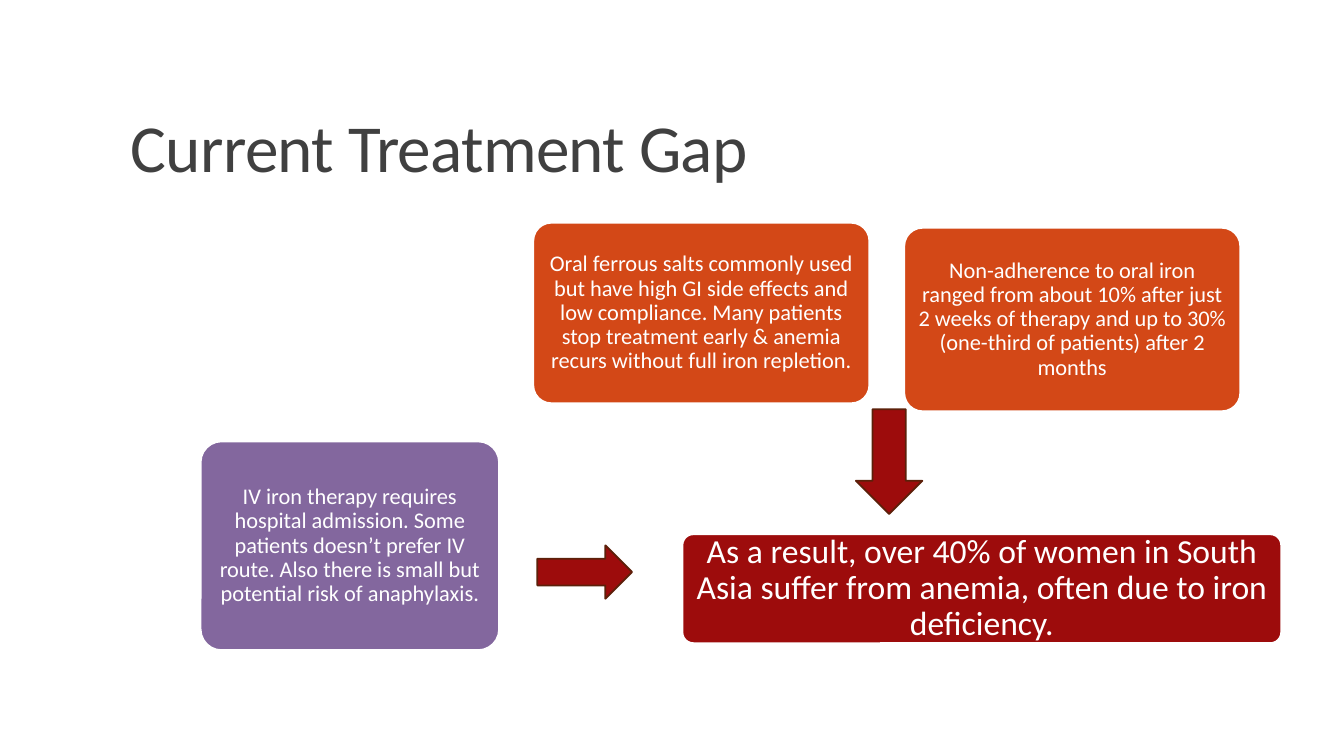
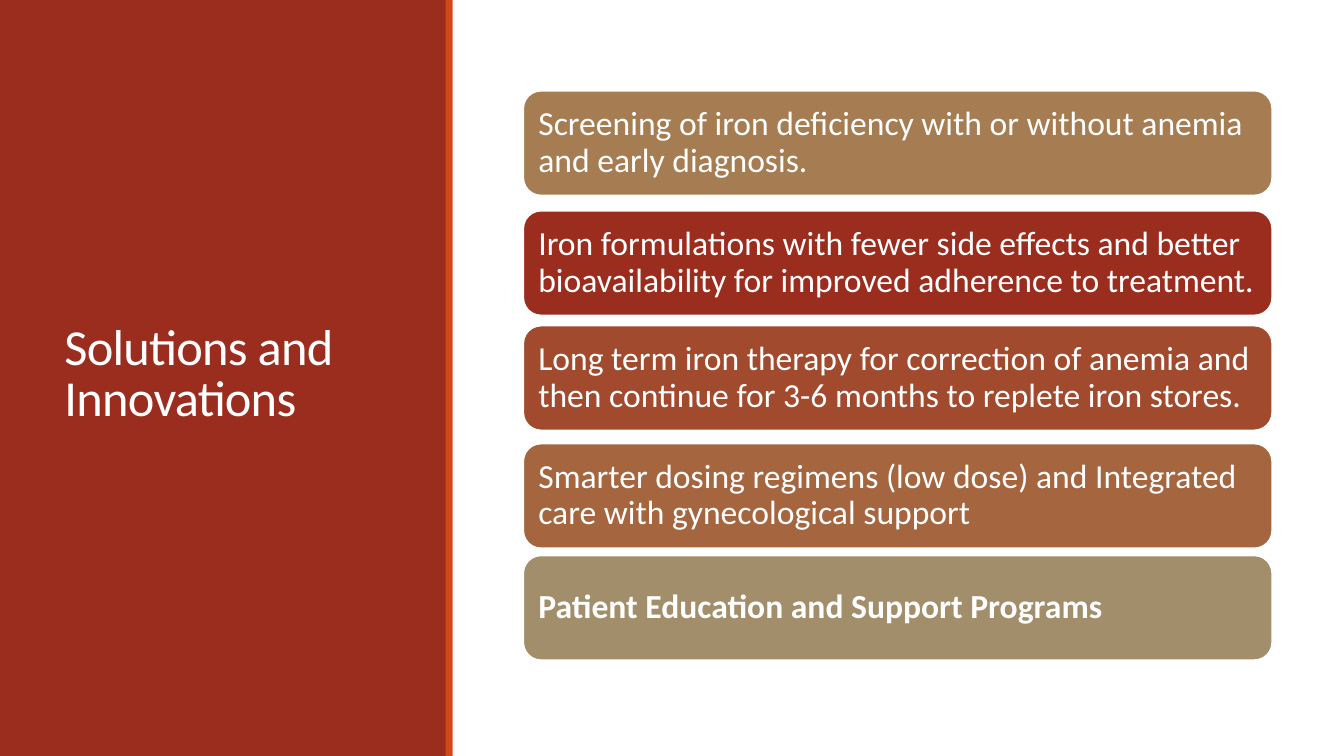
from pptx import Presentation
from pptx.dml.color import RGBColor
from pptx.enum.shapes import MSO_SHAPE as Shape
from pptx.enum.text import MSO_ANCHOR as Anchor, PP_ALIGN as Align
from pptx.util import Inches, Pt

# Colours
WHITE = RGBColor(0xFF, 0xFF, 0xFF)
CHARCOAL = RGBColor(0x40, 0x40, 0x40)
ORANGE = RGBColor(0xD3, 0x48, 0x17)
PURPLE = RGBColor(0x83, 0x67, 0x9E)
CRIMSON = RGBColor(0x9D, 0x0C, 0x0C)
DARK_BROWN = RGBColor(0x5C, 0x20, 0x0A)
BRICK = RGBColor(0x9B, 0x2D, 0x1F)
RUST = RGBColor(0xA1, 0x4A, 0x2E)
COPPER = RGBColor(0xA4, 0x65, 0x3F)
TAN = RGBColor(0xA6, 0x7D, 0x52)
KHAKI = RGBColor(0xA2, 0x8E, 0x6A)


def apply(target, values):
    for name, value in values.items():
        setattr(target, name, value)


class Deck:
    """Shared style and the current slide; areas are percentages of the slide."""
    FONT = "Calibri"
    LINE_WIDTH = Pt(1.25)

    def __init__(self):
        self.prs = Presentation()
        apply(self.prs, {"slide_width": Inches(13.33), "slide_height": Inches(7.5)})
        self.slide = None

    def new_slide(self):
        self.slide = self.prs.slides.add_slide(self.prs.slide_layouts[6])

    def place(self, area):
        left, top, width, height = area
        across, down = self.prs.slide_width / 100, self.prs.slide_height / 100
        return (round(left * across), round(top * down),
                round(width * across), round(height * down))

    def add_text(self, frame, text, size, color, anchor, align=Align.LEFT,
                 spacing=0.9, bold=False, inset=None):
        apply(frame, {"word_wrap": True, "vertical_anchor": anchor})
        if inset is not None:
            sides = ("left", "top", "right", "bottom")
            apply(frame, {f"margin_{side}": Inches(inset) for side in sides})
        paragraph = frame.paragraphs[0]
        apply(paragraph, {"alignment": align, "line_spacing": spacing})
        run = paragraph.add_run()
        run.text = text
        apply(run.font, {"name": self.FONT, "size": Pt(size), "bold": bold})
        run.font.color.rgb = color
        return run

    def title(self, text, area, size, color, anchor):
        box = self.slide.shapes.add_textbox(*self.place(area))
        run = self.add_text(box.text_frame, text, size, color, anchor, spacing=0.85)
        run._r.get_or_add_rPr().set("spc", "-50")

    def block(self, kind, area, fill, outline=None):
        shape = self.slide.shapes.add_shape(kind, *self.place(area))
        shape.shadow.inherit = False
        shape.fill.solid()
        shape.fill.fore_color.rgb = fill
        if outline is None:
            shape.line.fill.background()
        else:
            shape.line.color.rgb = outline
            shape.line.width = self.LINE_WIDTH
        return shape

    def card(self, text, area, fill, size, corner=0.1, inset=0.1, **style):
        shape = self.block(Shape.ROUNDED_RECTANGLE, area, fill, WHITE)
        shape.adjustments[0] = corner
        self.add_text(shape.text_frame, text, size, WHITE, Anchor.MIDDLE,
                      inset=inset, **style)

    def arrow(self, kind, area):
        self.block(kind, area, CRIMSON, DARK_BROWN)


def treatment_gap(deck):
    deck.new_slide()
    deck.title("Current Treatment Gap", (9, 4.13, 82.5, 21.2), 48, CHARCOAL,
               Anchor.BOTTOM)

    # Causes
    causes = [
        ("Oral ferrous salts commonly used but have high GI side effects and low "
         "compliance. Many patients stop treatment early & anemia recurs without "
         "full iron repletion.", (39.68, 29.47, 25, 23.87), ORANGE),
        ("IV iron therapy requires hospital admission. Some patients doesn’t prefer "
         "IV route. Also there is small but potential risk of anaphylaxis.",
         (14.93, 58.4, 22.2, 27.6), PURPLE),
        ("Non-adherence to oral iron ranged from about 10% after just 2 weeks of "
         "therapy and up to 30% (one-third of patients) after 2 months",
         (67.28, 30.13, 25, 24.27), ORANGE),
    ]
    for text, area, fill in causes:
        deck.card(text, area, fill, 16, inset=0.07, align=Align.CENTER)

    # Result
    deck.card("As a result, over 40% of women in South Asia suffer from anemia, "
              "often due to iron deficiency.", (50.78, 70.67, 44.55, 14.4),
              CRIMSON, 24, align=Align.CENTER)
    deck.arrow(Shape.DOWN_ARROW, (63.68, 54.13, 4.95, 13.87))
    deck.arrow(Shape.RIGHT_ARROW, (39.98, 72.13, 7.05, 7.07))


def solutions(deck):
    deck.new_slide()

    # Side panel
    deck.block(Shape.RECTANGLE, (0, 0, 33.23, 100), BRICK)
    deck.block(Shape.RECTANGLE, (33.15, 0, 0.53, 100), ORANGE)
    deck.title("Solutions and Innovations", (4.05, 7.6, 25.28, 84.13), 36, WHITE,
               Anchor.MIDDLE)

    # Stack of measures: top, fill, text, bold
    measures = [
        (12, TAN, "Screening of iron deficiency with or without anemia and early "
                  "diagnosis.", False),
        (27.87, BRICK, "Iron formulations with fewer side effects and better "
                       "bioavailability for improved adherence to treatment.", False),
        (43.07, RUST, "Long term iron therapy for correction of anemia and then "
                      "continue for 3-6 months to replete iron stores.", False),
        (58.67, COPPER, "Smarter dosing regimens (low dose) and Integrated care "
                        "with gynecological support", False),
        (73.47, KHAKI, "Patient Education and Support Programs", True),
    ]
    for top, fill, text, bold in measures:
        deck.card(text, (38.93, top, 55.73, 13.87), fill, 24, corner=0.17, bold=bold)


def main():
    deck = Deck()
    treatment_gap(deck)
    solutions(deck)
    deck.prs.save("out.pptx")


if __name__ == "__main__":
    main()
